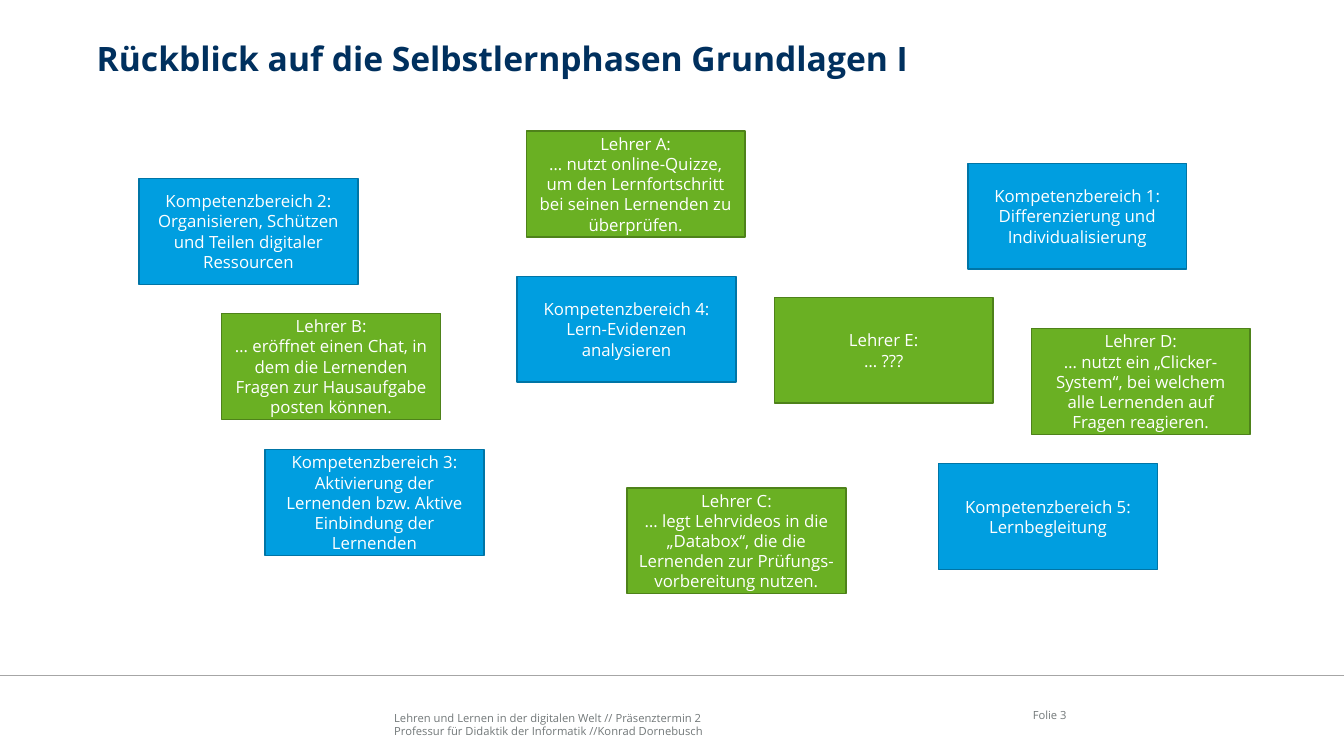
import pptx
import pptx.dml.color
import pptx.enum.shapes
import pptx.enum.text
import pptx.util
from lxml import etree
from pptx.util import Inches

FONT = "Open Sans"
COLORS = {
    "title": "00305E",
    "footer": "727879",
    "rule": "A6A6A6",
    "white": "FFFFFF",
    "blue": "009EE0",
    "blue_edge": "0075A6",
    "green": "6AB023",
    "green_edge": "4E821A",
}
CARD_WIDTH, CARD_HEIGHT = 2.17, 1.05
ALIGN = pptx.enum.text.PP_ALIGN
ANCHOR = pptx.enum.text.MSO_ANCHOR

COMPETENCES = [
    (1.38, 1.77, "Kompetenzbereich 2: Organisieren, Schützen und Teilen digitaler Ressourcen"),
    (2.63, 4.46, "Kompetenzbereich 3: Aktivierung der Lernenden bzw. Aktive Einbindung der Lernenden"),
    (5.13, 2.74, "Kompetenzbereich 4:\nLern-Evidenzen analysieren"),
    (9.31, 4.6, "Kompetenzbereich 5: Lernbegleitung"),
    (9.6, 1.62, "Kompetenzbereich 1: Differenzierung und Individualisierung"),
]
TEACHERS = [
    (5.22, 1.3, "Lehrer A:\n… nutzt online-Quizze, um den Lernfortschritt bei seinen Lernenden zu überprüfen."),
    (2.2, 3.11, "Lehrer B:\n… eröffnet einen Chat, in dem die Lernenden Fragen zur Hausaufgabe posten können."),
    (6.22, 4.84, "Lehrer C:\n… legt Lehrvideos in die „Databox“, die die Lernenden zur Prüfungs-vorbereitung nutzen."),
    (10.23, 3.26, "Lehrer D:\n… nutzt ein „Clicker-System“, bei welchem alle Lernenden auf Fragen reagieren."),
    (7.68, 2.95, "Lehrer E:\n… ???"),
]


def color(name):
    return pptx.dml.color.RGBColor.from_string(COLORS[name])


def write_text(frame, text, size=12, fill="white", bold=False, align=ALIGN.LEFT, anchor=ANCHOR.TOP):
    frame.word_wrap = True
    frame.vertical_anchor = anchor
    for index, line in enumerate(text.split("\n")):
        para = frame.add_paragraph() if index else frame.paragraphs[0]
        para.alignment = align
        span = para.add_run()
        span.text = line
        span.font.name = FONT
        span.font.size = pptx.util.Pt(size)
        span.font.bold = bold
        span.font.color.rgb = color(fill)


def add_label(slide, left, top, width, height, text, **style):
    box = slide.shapes.add_textbox(Inches(left), Inches(top), Inches(width), Inches(height))
    frame = box.text_frame
    frame.margin_left = frame.margin_right = frame.margin_top = frame.margin_bottom = 0
    write_text(frame, text, **style)


def add_card(slide, left, top, text, fill):
    card = slide.shapes.add_shape(
        pptx.enum.shapes.MSO_SHAPE.RECTANGLE,
        Inches(left), Inches(top), Inches(CARD_WIDTH), Inches(CARD_HEIGHT),
    )
    card.shadow.inherit = False
    card.fill.solid()
    card.fill.fore_color.rgb = color(fill)
    card.line.color.rgb = color(fill + "_edge")
    card.line.width = pptx.util.Pt(1)
    write_text(card.text_frame, text, align=ALIGN.CENTER, anchor=ANCHOR.MIDDLE)


def add_rule(slide, top, width):
    rule = slide.shapes.add_connector(
        pptx.enum.shapes.MSO_CONNECTOR.STRAIGHT, 0, Inches(top), Inches(width), Inches(top)
    )
    rule.line.color.rgb = color("rule")
    rule.line.width = pptx.util.Pt(1)
    etree.SubElement(rule._element.spPr, pptx.oxml.ns.qn("a:effectLst"))


def main():
    deck = pptx.Presentation()
    deck.slide_width, deck.slide_height = Inches(13.33), Inches(7.5)
    slide = deck.slides.add_slide(deck.slide_layouts[6])
    add_label(slide, 3.91, 7.05, 5.67, 0.27,
              "Lehren und Lernen in der digitalen Welt // Präsenztermin 2\n"
              "Professur für Didaktik der Informatik //Konrad Dornebusch",
              size=8, fill="footer", anchor=ANCHOR.BOTTOM)
    add_rule(slide, 6.7, 13.33)
    add_label(slide, 9.81, 7.03, 0.77, 0.14, "Folie 3", size=8, fill="footer", align=ALIGN.RIGHT)
    add_label(slide, 0.96, 0.38, 11.57, 0.75, "Rückblick auf die Selbstlernphasen Grundlagen I",
              size=24, fill="title", bold=True)
    for fill, cards in (("blue", COMPETENCES), ("green", TEACHERS)):
        for left, top, text in cards:
            add_card(slide, left, top, text, fill)
    deck.save("out.pptx")


if __name__ == "__main__":
    main()
